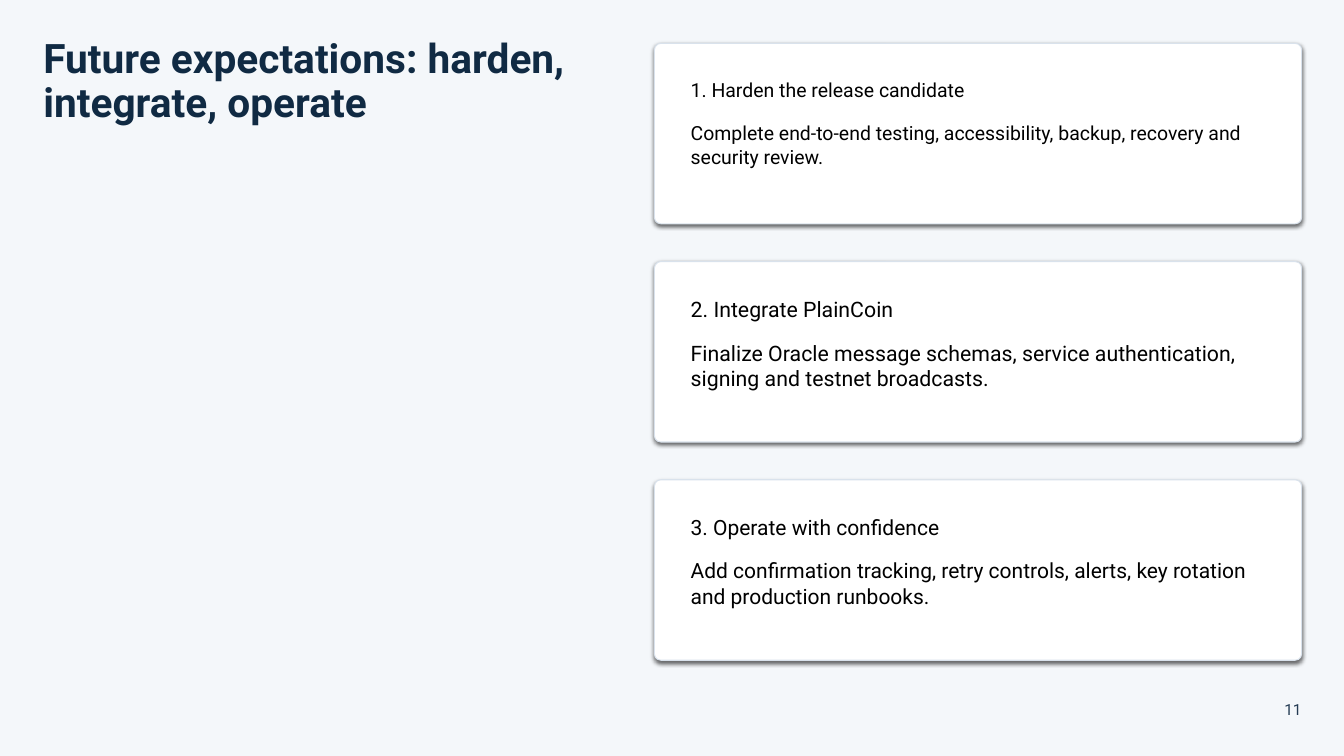
from lxml import etree
from pptx import Presentation
from pptx import util as u
from pptx.dml.color import RGBColor
from pptx.enum import shapes, text
from pptx.oxml import ns

COLORS = {
    "background": "F4F7FA",
    "card": "FFFFFF",
    "border": "D9E2EC",
    "title": "102A43",
    "number": "243B53",
    "body": "000000",
    "shadow": "000000",
}
FONT = "Roboto"
CARD_TOP, CARD_PITCH = 0.43, 2.165
# heading, description, text size, description line spacing
STEPS = [
    ("1. Harden the release candidate",
     "Complete end-to-end testing, accessibility, backup, recovery and security review.",
     13.9, 1.05),
    ("2. Integrate PlainCoin",
     "Finalize Oracle message schemas, service authentication, signing and testnet broadcasts.",
     15.2, 1.0),
    ("3. Operate with confidence",
     "Add confirmation tracking, retry controls, alerts, key rotation and production runbooks.",
     15, 1.0),
]


def rgb(name):
    return RGBColor.from_string(COLORS[name])


def add_shadow(sp):
    """Give the shape a soft shadow falling downwards."""
    sp.shadow.inherit = False
    effects = sp._element.spPr.find(ns.qn("a:effectLst"))
    shadow = etree.SubElement(effects, ns.qn("a:outerShdw"), blurRad="38100",
                              dist="19050", dir="5400000", rotWithShape="0")
    color = etree.SubElement(shadow, ns.qn("a:srgbClr"), val=COLORS["shadow"])
    etree.SubElement(color, ns.qn("a:alpha"), val="60000")


def add_card(slide, top):
    sp = slide.shapes.add_shape(
        shapes.MSO_SHAPE.ROUNDED_RECTANGLE,
        u.Inches(6.49), u.Inches(top), u.Inches(6.42), u.Inches(1.79))
    sp.adjustments[0] = 0.036
    sp.fill.solid()
    sp.fill.fore_color.rgb = rgb("card")
    sp.line.color.rgb = rgb("border")
    sp.line.width = u.Pt(0.75)
    add_shadow(sp)


def add_box(slide, left, top, width, height, anchor=text.MSO_ANCHOR.TOP):
    """Add a wrapping text box without margins and return its text frame."""
    box = slide.shapes.add_textbox(*map(u.Inches, (left, top, width, height)))
    tf = box.text_frame
    tf.word_wrap = True
    tf.vertical_anchor = anchor
    tf.margin_left = tf.margin_right = tf.margin_top = tf.margin_bottom = 0
    return tf


def add_run(p, words, size, color, bold=False):
    r = p.add_run()
    r.text = words
    r.font.name = FONT
    r.font.size = u.Pt(size)
    r.font.bold = bold
    r.font.color.rgb = rgb(color)


def add_step(slide, top, heading, description, size, spacing):
    add_card(slide, top)
    tf = add_box(slide, 6.85, top + 0.32, 5.78, 1.15)
    p = tf.paragraphs[0]
    p.line_spacing = 1.1
    add_run(p, heading, size, "body")
    p = tf.add_paragraph()
    p.line_spacing = spacing
    p.space_before = p.space_after = u.Pt(13)
    add_run(p, description, size, "body")


def main():
    prs = Presentation()
    prs.slide_width, prs.slide_height = u.Inches(13.33), u.Inches(7.5)
    slide = prs.slides.add_slide(prs.slide_layouts[6])
    slide.background.fill.solid()
    slide.background.fill.fore_color.rgb = rgb("background")

    p = add_box(slide, 0.43, 0.38, 5.39, 1.15).paragraphs[0]
    p.line_spacing = 0.9
    add_run(p, "Future expectations: harden, integrate, operate", 29, "title", bold=True)

    for i, step in enumerate(STEPS):
        add_step(slide, CARD_TOP + i * CARD_PITCH, *step)

    p = add_box(slide, 12.34, 6.87, 0.57, 0.26, text.MSO_ANCHOR.BOTTOM).paragraphs[0]
    p.alignment = text.PP_ALIGN.RIGHT
    add_run(p, "11", 11, "number")

    prs.save("out.pptx")


if __name__ == "__main__":
    main()
